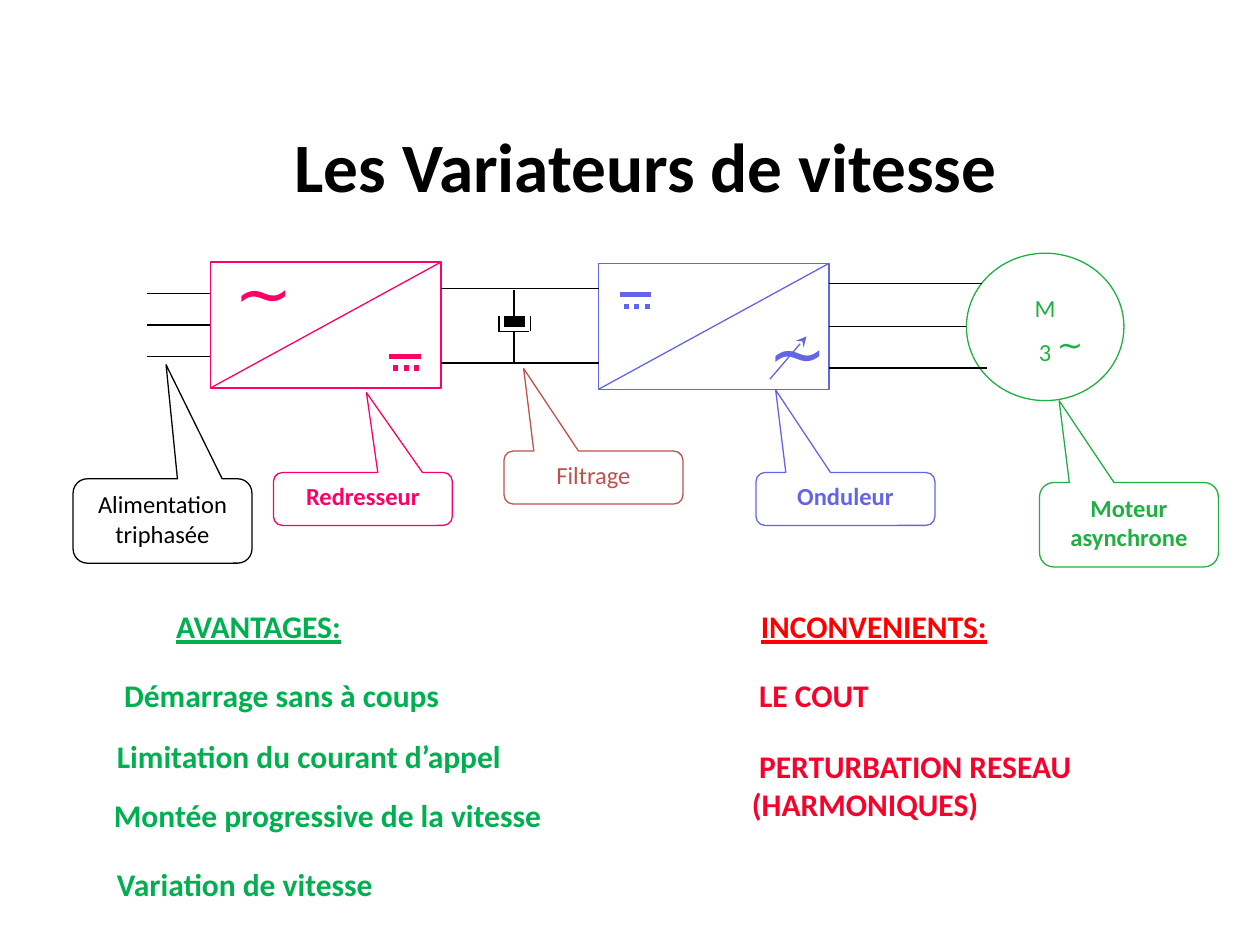
"""Build a slide showing the power stages, benefits and drawbacks of variable speed drives."""

import dataclasses
import typing

import lxml.etree
import pptx
import pptx.dml.color
import pptx.enum.dml
import pptx.enum.shapes
import pptx.enum.text
import pptx.oxml.ns
import pptx.util

Inches = pptx.util.Inches
Pt = pptx.util.Pt
SHAPES = pptx.enum.shapes.MSO_SHAPE
CENTER = pptx.enum.text.PP_ALIGN.CENTER
TOP = pptx.enum.text.MSO_ANCHOR.TOP
MIDDLE = pptx.enum.text.MSO_ANCHOR.MIDDLE

BLACK = "000000"
PINK = "FF0066"
VIOLET = "6265E8"
MOTOR_GREEN = "20B042"
BRICK = "C0504D"
GREEN = "00B050"
RED = "FF0000"
CRIMSON = "F5032B"

BODY = {"name": "Calibri", "size": Pt(18), "bold": True}
HEADING = {**BODY, "underline": True}
TITLE = {**BODY, "size": Pt(39.6)}
LABEL = {"name": "Calibri", "size": Pt(14), "bold": False}
STRONG_LABEL = {**LABEL, "bold": True}
SMALL_WAVE = {**LABEL, "size": Pt(18)}
LARGE_WAVE = {**LABEL, "size": Pt(40)}


@dataclasses.dataclass
class Frame:
    left: float
    top: float
    width: float
    height: float

    def lengths(self) -> list:
        return [Inches(value) for value in dataclasses.astuple(self)]


@dataclasses.dataclass
class Caption:
    text: str
    frame: Frame
    colour: str
    font: dict
    align: typing.Any = None
    anchor: typing.Any = TOP


@dataclasses.dataclass
class Callout:
    text: str
    frame: Frame
    colour: str
    font: dict
    pointer: tuple


@dataclasses.dataclass
class Wire:
    start: tuple
    end: tuple
    colour: str = BLACK
    width: float = 0.75
    dotted: bool = False
    arrow: bool = False


@dataclasses.dataclass
class Converter:
    left: float
    top: float
    colour: str
    wave: Frame
    direct: tuple


CONVERTERS = [
    Converter(1.67, 2.08, PINK, Frame(1.76, 1.92, 0.42, 0.77), (3.09, 2.83)),
    Converter(4.75, 2.09, VIOLET, Frame(6, 2.4, 0.42, 0.77), (4.92, 2.34)),
]

SUPPLY = [Wire((1.17, y), (1.67, y)) for y in (2.33, 2.58, 2.83)]
LINK = [Wire((left, y), (right, y)) for y in (2.29, 2.88) for left, right in ((3.5, 4.08), (4.08, 4.75))]
OUTPUT = [Wire((6.58, y), (right, y)) for y, right in ((2.25, 7.79), (2.59, 7.67), (2.92, 7.83))]
CAPACITOR = [
    Wire((4.08, 2.3), (4.08, 2.55)),
    Wire((4, 2.55), (4.17, 2.55), width=6),
    Wire((3.95, 2.63), (4.2, 2.63)),
    Wire((4.08, 2.63), (4.08, 2.88)),
    *[Wire((x, 2.51), (x, 2.63)) for x in (3.96, 4.21)],
]
REGULATION = [Wire((6.11, 3.01), (6.4, 2.67), VIOLET, arrow=True)]

CALLOUTS = [
    Callout("Alimentation triphasée", Frame(0.58, 3.8, 1.42, 0.67), BLACK, LABEL, (0.02, -1.85)),
    Callout("Redresseur", Frame(2.17, 3.75, 1.42, 0.42), PINK, STRONG_LABEL, (0.02, -2.01)),
    Callout("Filtrage", Frame(4, 3.58, 1.42, 0.42), BRICK, LABEL, (-0.39, -2.06)),
    Callout("Onduleur", Frame(6, 3.75, 1.42, 0.42), VIOLET, STRONG_LABEL, (-0.39, -2.06)),
    Callout("Moteur asynchrone", Frame(8.25, 3.83, 1.42, 0.67), MOTOR_GREEN, STRONG_LABEL, (-0.39, -1.47)),
]

CAPTIONS = [
    Caption("Les Variateurs de vitesse", Frame(0.25, 0.92, 9.75, 0.78), BLACK, TITLE, CENTER, MIDDLE),
    Caption("M\n3", Frame(7.96, 2.28, 0.67, 0.68), MOTOR_GREEN, LABEL, CENTER),
    Caption("∼", Frame(8.29, 2.53, 0.5, 0.5), MOTOR_GREEN, SMALL_WAVE),
    Caption("AVANTAGES:", Frame(1.3, 4.77, 3.17, 0.4), GREEN, HEADING),
    Caption(" Démarrage sans à coups", Frame(0.83, 5.32, 4.17, 0.4), GREEN, BODY),
    Caption("Limitation du courant d’appel", Frame(0.83, 5.8, 3.4, 0.4), GREEN, BODY),
    Caption(" Montée progressive de la vitesse", Frame(0.75, 6.27, 3.7, 0.4), GREEN, BODY),
    Caption("Variation de vitesse", Frame(0.83, 6.82, 3.75, 0.4), GREEN, BODY),
    Caption("INCONVENIENTS:", Frame(5.94, 4.77, 3.17, 0.4), RED, HEADING),
    Caption(" LE COUT", Frame(5.87, 5.32, 2.04, 0.4), CRIMSON, BODY),
    Caption(" PERTURBATION RESEAU (HARMONIQUES)", Frame(5.87, 5.88, 3.47, 0.71), CRIMSON, BODY),
]


def paint(target: typing.Any, colour: str) -> None:
    target.rgb = pptx.dml.color.RGBColor.from_string(colour)


def write_text(box, text: str, colour: str, font: dict, align=None, anchor=TOP) -> None:
    frame = box.text_frame
    frame.word_wrap = True
    frame.vertical_anchor = anchor
    for index, line in enumerate(text.split("\n")):
        para = frame.add_paragraph() if index else frame.paragraphs[0]
        para.alignment = align
        if index:
            para.space_before = Pt(8)
        span = para.add_run()
        span.text = line
        for name, value in font.items():
            setattr(span.font, name, value)
        paint(span.font.color, colour)


def draw_caption(page, caption: Caption) -> None:
    box = page.shapes.add_textbox(*caption.frame.lengths())
    write_text(box, caption.text, caption.colour, caption.font, caption.align, caption.anchor)


def draw_outline(page, preset, frame: Frame, colour: str):
    shape = page.shapes.add_shape(preset, *frame.lengths())
    shape.shadow.inherit = False
    shape.fill.background()
    shape.line.width = Pt(0.75)
    paint(shape.line.color, colour)
    return shape


def draw_callout(page, callout: Callout) -> None:
    shape = draw_outline(page, SHAPES.ROUNDED_RECTANGULAR_CALLOUT, callout.frame, callout.colour)
    for index, value in enumerate((*callout.pointer, 0.17)):
        shape.adjustments[index] = value
    write_text(shape, callout.text, callout.colour, callout.font, CENTER)


def draw_wire(page, wire: Wire) -> None:
    ends = [Inches(value) for value in (*wire.start, *wire.end)]
    connector = page.shapes.add_connector(pptx.enum.shapes.MSO_CONNECTOR.STRAIGHT, *ends)
    connector.line.width = Pt(wire.width)
    paint(connector.line.color, wire.colour)
    if wire.dotted:
        connector.line.dash_style = pptx.enum.dml.MSO_LINE.ROUND_DOT
    properties = connector._element.spPr
    if wire.arrow:
        outline = properties.find(pptx.oxml.ns.qn("a:ln"))
        lxml.etree.SubElement(outline, pptx.oxml.ns.qn("a:tailEnd"), type="stealth")
    lxml.etree.SubElement(properties, pptx.oxml.ns.qn("a:effectLst"))


def draw_converter(page, converter: Converter) -> None:
    left, top, colour = converter.left, converter.top, converter.colour
    draw_outline(page, SHAPES.RECTANGLE, Frame(left, top, 1.83, 1), colour)
    draw_wire(page, Wire((left, top + 1), (left + 1.83, top), colour))
    draw_caption(page, Caption("∼", converter.wave, colour, LARGE_WAVE))
    x, y = converter.direct
    draw_wire(page, Wire((x, y), (x + 0.25, y), colour, 3))
    draw_wire(page, Wire((x + 0.03, y + 0.09), (x + 0.28, y + 0.09), colour, 3, dotted=True))


def main() -> None:
    deck = pptx.Presentation()
    deck.slide_width, deck.slide_height = Inches(10), Inches(7.5)
    page = deck.slides.add_slide(deck.slide_layouts[6])
    draw_outline(page, SHAPES.OVAL, Frame(7.67, 2.01, 1.25, 1.17), MOTOR_GREEN)
    for converter in CONVERTERS:
        draw_converter(page, converter)
    for wire in SUPPLY + LINK + CAPACITOR + OUTPUT + REGULATION:
        draw_wire(page, wire)
    for callout in CALLOUTS:
        draw_callout(page, callout)
    for caption in CAPTIONS:
        draw_caption(page, caption)
    deck.save("out.pptx")


if __name__ == "__main__":
    main()
